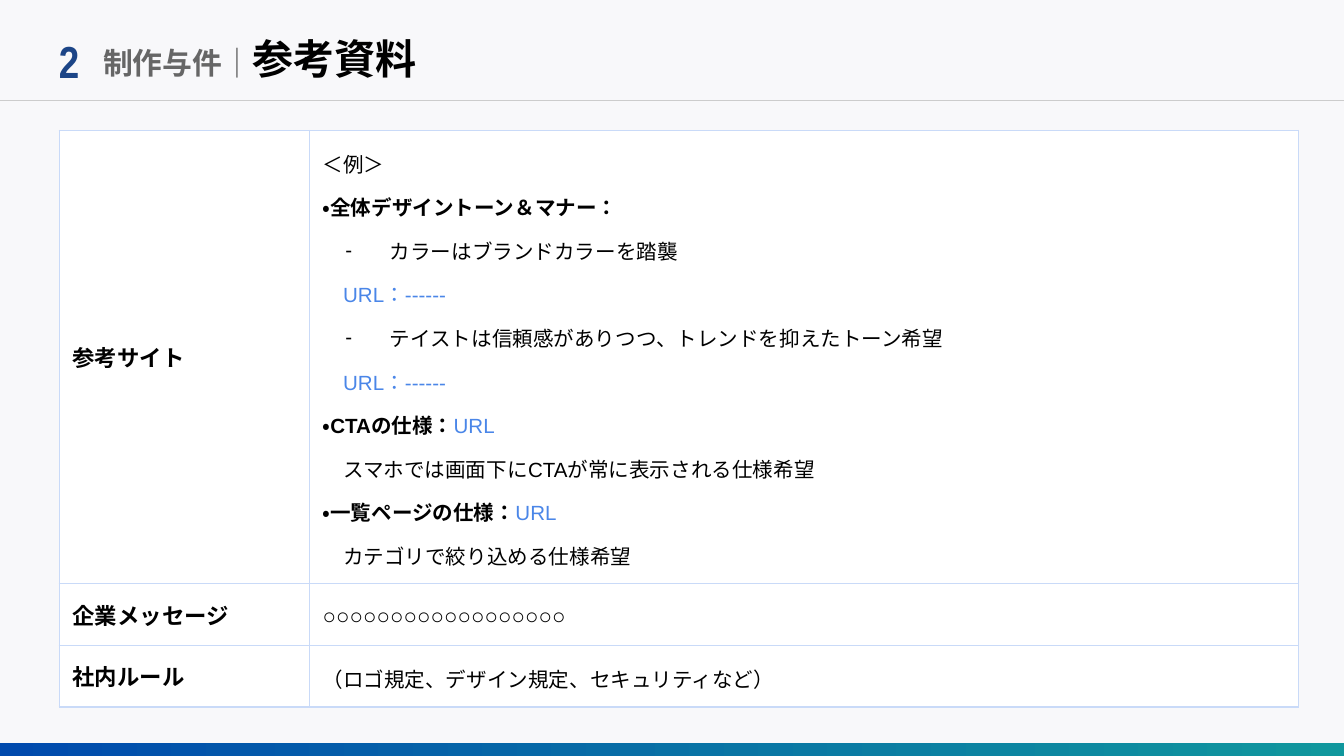
"""Build the reference-material slide: a numbered heading above a three-row table."""
from lxml import etree
from pptx import Presentation
from pptx.dml.color import RGBColor
from pptx.enum import lang, shapes, text
from pptx.oxml import ns
from pptx.util import Inches, Pt

THEME = {
    "font": "Arial", "number_font": "Arial Narrow",
    "back": "F8F8FA", "rule": "CCCCCC", "border": "C9DAF8", "cell": "FFFFFF",
    "bar": ("10979D", "004AAD"),
    "number": "1C4587", "section": "666666", "ink": "000000", "link": "4A86E8",
    "number_size": 24, "section_size": 16, "title_size": 22,
    "label_size": 12, "body_size": 11, "rule_width": 0.75,
}

# Each span is (wording, style); each line is (kind, spans).
REFERENCES = [
    ("plain", [("＜例＞", "body")]),
    ("plain", [("・全体デザイントーン＆マナー：", "strong")]),
    ("dash", [("カラーはブランドカラーを踏襲", "body")]),
    ("plain", [("　", "body"), ("URL：------", "link")]),
    ("dash", [("テイストは信頼感がありつつ、トレンドを抑えたトーン希望", "body")]),
    ("plain", [("　", "body"), ("URL：------", "link")]),
    ("plain", [("・CTAの仕様：", "strong"), ("URL", "link")]),
    ("plain", [("　スマホでは画面下にCTAが常に表示される仕様希望", "body")]),
    ("plain", [("・一覧ページの仕様：", "strong"), ("URL", "link")]),
    ("plain", [("　カテゴリで絞り込める仕様希望", "body")]),
]
ROWS = [
    ("参考サイト", REFERENCES, 3.31),
    ("企業メッセージ", [("plain", [("○○○○○○○○○○○○○○○○○○", "large")])], 0.46),
    ("社内ルール", [("plain", [("（ロゴ規定、デザイン規定、セキュリティなど）", "body")])], 0.46),
]
COLUMNS = [1.86, 7.36]
HEADINGS = [
    (0.34, 0.41, [("2", "number")]),
    (0.67, 6.16, [("制作与件｜", "section"), ("参考資料", "title")]),
]
STYLES = {
    "number": ("number_size", "number", True, "number_font"),
    "section": ("section_size", "section", True, "font"),
    "title": ("title_size", "ink", True, "font"),
    "label": ("label_size", "ink", True, "font"),
    "large": ("label_size", "ink", False, "font"),
    "body": ("body_size", "ink", False, "font"),
    "strong": ("body_size", "ink", True, "font"),
    "link": ("body_size", "link", False, "font"),
}


def colour(name):
    """Return a theme colour."""
    return RGBColor.from_string(THEME[name])


def add_spans(para, spans):
    """Add styled runs to a paragraph."""
    for wording, style in spans:
        size, ink, bold, face = STYLES[style]
        span = para.add_run()
        span.text = wording
        span.font.size = Pt(THEME[size])
        span.font.bold = bold
        span.font.name = THEME[face]
        span.font.language_id = lang.MSO_LANGUAGE_ID.JAPANESE
        span.font.color.rgb = colour(ink)


def add_dash(para):
    """Give a paragraph a hanging dash bullet."""
    props = para._p.get_or_add_pPr()
    props.set("marL", str(Inches(0.5)))
    props.set("indent", str(Inches(-0.33)))
    shade = etree.SubElement(props, ns.qn("a:buClr"))
    etree.SubElement(shade, ns.qn("a:srgbClr")).set("val", THEME["ink"])
    etree.SubElement(props, ns.qn("a:buFont")).set("typeface", THEME["font"])
    etree.SubElement(props, ns.qn("a:buChar")).set("char", "-")


def style_cell(cell):
    """Set margins, borders and fill of a table cell."""
    cell.vertical_anchor = text.MSO_ANCHOR.MIDDLE
    cell.margin_left = cell.margin_right = Inches(0.1)
    cell.margin_top = cell.margin_bottom = Inches(0.1)
    props = cell._tc.get_or_add_tcPr()
    for side in ("lnL", "lnR", "lnT", "lnB"):
        edge = etree.SubElement(props, ns.qn(f"a:{side}"), w=str(Pt(THEME["rule_width"])))
        paint = etree.SubElement(edge, ns.qn("a:solidFill"))
        etree.SubElement(paint, ns.qn("a:srgbClr")).set("val", THEME["border"])
    cell.fill.solid()
    cell.fill.fore_color.rgb = colour("cell")


def fill_details(cell, lines):
    """Write the detail lines of one row."""
    for index, (kind, spans) in enumerate(lines):
        para = cell.text_frame.add_paragraph() if index else cell.text_frame.paragraphs[0]
        para.line_spacing = 1.15
        if index:
            para.space_before = Pt(5)
        if index == len(lines) - 1:
            para.space_after = Pt(5)
        if kind == "dash":
            add_dash(para)
        add_spans(para, spans)


def add_frame(page):
    """Draw the header rule and the gradient footer bar."""
    rule = page.shapes.add_connector(
        shapes.MSO_CONNECTOR.STRAIGHT, Inches(-0.01), Inches(0.75), Inches(10.01), Inches(0.75))
    rule.line.color.rgb = colour("rule")
    rule.line.width = Pt(THEME["rule_width"])
    etree.SubElement(rule._element.spPr, ns.qn("a:effectLst"))
    bar = page.shapes.add_shape(
        shapes.MSO_SHAPE.RECTANGLE, Inches(-0.01), Inches(5.53), Inches(10.02), Inches(0.1))
    bar.shadow.inherit = False
    bar.line.fill.background()
    bar.fill.gradient()
    bar.fill.gradient_angle = 180
    for stop, shade, place in zip(bar.fill.gradient_stops, THEME["bar"], (0, 1)):
        stop.color.rgb = RGBColor.from_string(shade)
        stop.position = place


def add_table(page):
    """Add the table of reference material."""
    height = sum(row[2] for row in ROWS)
    table = page.shapes.add_table(
        len(ROWS), len(COLUMNS), Inches(0.44), Inches(0.97),
        Inches(sum(COLUMNS)), Inches(height)).table
    table.first_row = table.horz_banding = False
    for column, width in zip(table.columns, COLUMNS):
        column.width = Inches(width)
    for row, (label, lines, tall) in zip(table.rows, ROWS):
        row.height = Inches(tall)
        for cell in row.cells:
            style_cell(cell)
        add_spans(row.cells[0].text_frame.paragraphs[0], [(label, "label")])
        fill_details(row.cells[1], lines)


def add_headings(page):
    """Add the section number and the title."""
    for left, width, spans in HEADINGS:
        box = page.shapes.add_textbox(Inches(left), Inches(0.15), Inches(width), Inches(0.63))
        frame = box.text_frame
        frame.word_wrap = True
        frame.vertical_anchor = text.MSO_ANCHOR.TOP
        frame.margin_left = frame.margin_right = Inches(0.1)
        frame.margin_top = frame.margin_bottom = Inches(0.1)
        add_spans(frame.paragraphs[0], spans)


def main():
    """Build and save the deck."""
    deck = Presentation()
    deck.slide_width, deck.slide_height = Inches(10), Inches(10 * 9 / 16)
    page = deck.slides.add_slide(deck.slide_layouts[6])
    page.background.fill.solid()
    page.background.fill.fore_color.rgb = colour("back")
    add_frame(page)
    add_table(page)
    add_headings(page)
    deck.save("out.pptx")


if __name__ == "__main__":
    main()
